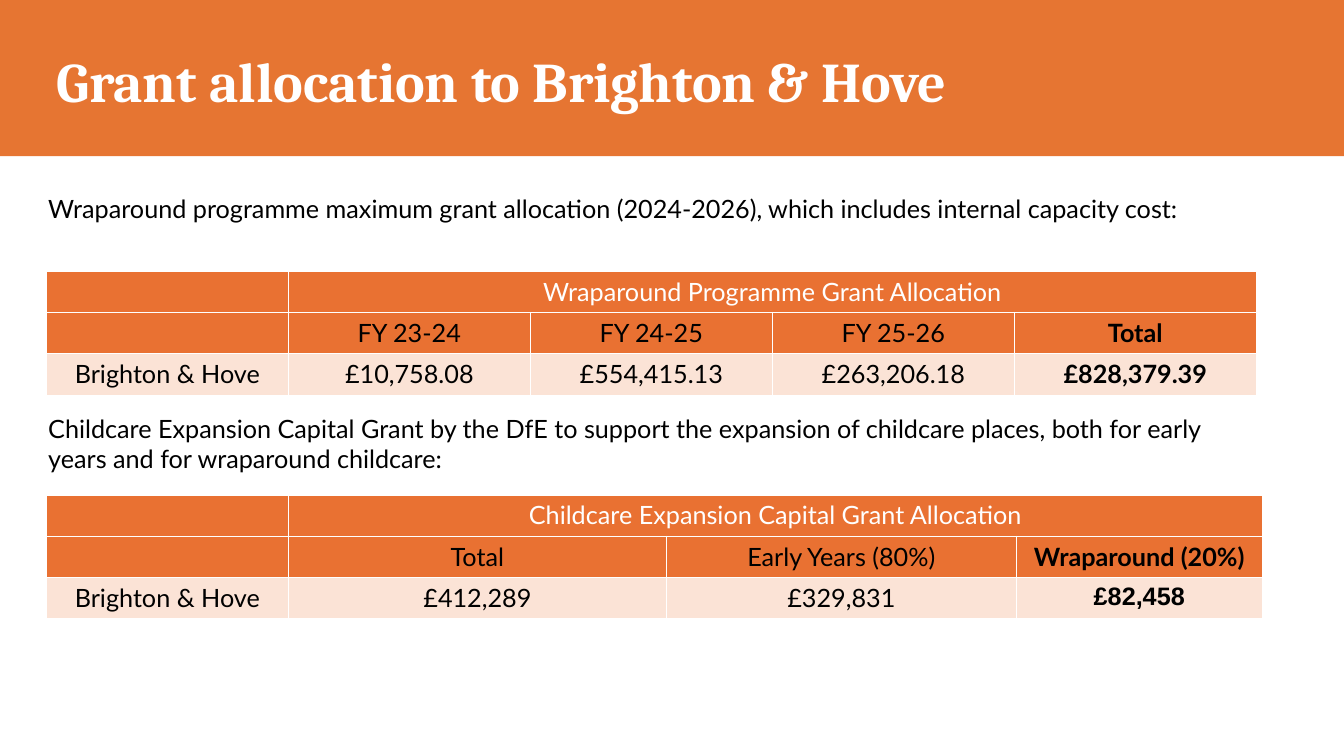
from dataclasses import dataclass

from lxml import etree
from pptx import Presentation
from pptx import util as u
from pptx.dml.color import RGBColor
from pptx.enum import shapes, text
from pptx.oxml import ns

# Content: bold cells are the last column below the heading
TITLE = "Grant allocation to Brighton & Hove"
SECTIONS = [
    {
        "intro": "Wraparound programme maximum grant allocation (2024-2026), "
                 "which includes internal capacity cost:",
        "intro_top": 1.87, "intro_height": 0.4, "table_top": 2.69,
        "columns": [2.4] * 5,
        "rows": [
            ["", "Wraparound Programme Grant Allocation", "", "", ""],
            ["", "FY 23-24", "FY 24-25", "FY 25-26", "Total"],
            ["Brighton & Hove", "£10,758.08", "£554,415.13", "£263,206.18", "£828,379.39"],
        ],
        "total_font": "Lato",
    },
    {
        "intro": "Childcare Expansion Capital Grant by the DfE to support the expansion "
                 "of childcare places, both for early years and for wraparound childcare:",
        "intro_top": 4.05, "intro_height": 0.71, "table_top": 4.91,
        "columns": [2.4, 3.75, 3.47, 2.44],
        "rows": [
            ["", "Childcare Expansion Capital Grant Allocation", "", ""],
            ["", "Total", "Early Years (80%)", "Wraparound (20%)"],
            ["Brighton & Hove", "£412,289", "£329,831", "£82,458"],
        ],
        "total_font": "Arial",
    },
]


@dataclass(frozen=True)
class Theme:
    banner: str = "E67532"
    header: str = "E97132"
    body: str = "FBE3D6"
    white: str = "FFFFFF"
    black: str = "000000"
    title_font: str = "Cambria"
    text_font: str = "Lato"
    title_size: int = 40
    text_size: int = 18
    border: float = 1


THEME = Theme()
WIDTH, HEIGHT = 13.33, 7.5
LEFT, INTRO_LEFT = 0.46, 0.38
CONTENT_WIDTH, INTRO_WIDTH = 12, 12.08
ROW_HEIGHT = 0.41


def style(paragraph, size, name, color, bold=False):
    font = paragraph.font
    font.size, font.name, font.bold = u.Pt(size), name, bold
    font.color.rgb = RGBColor.from_string(color)


def add_text(slide, box, words, size, name, color, bold=False):
    shape = slide.shapes.add_textbox(*map(u.Inches, box))
    shape.text_frame.word_wrap = True
    paragraph = shape.text_frame.paragraphs[0]
    paragraph.text = words
    style(paragraph, size, name, color, bold)
    return shape.text_frame


def add_borders(cell):
    properties = cell._tc.get_or_add_tcPr()
    for side in ("a:lnL", "a:lnR", "a:lnT", "a:lnB"):
        line = etree.SubElement(properties, ns.qn(side), w=str(u.Pt(THEME.border)))
        fill = etree.SubElement(line, ns.qn("a:solidFill"))
        etree.SubElement(fill, ns.qn("a:srgbClr"), val=THEME.white)


def add_grant_table(slide, section):
    rows, columns = section["rows"], section["columns"]
    last = len(columns) - 1
    frame = slide.shapes.add_table(
        len(rows), len(columns), u.Inches(LEFT), u.Inches(section["table_top"]),
        u.Inches(sum(columns)), u.Inches(ROW_HEIGHT * len(rows)))
    table = frame.table
    table.first_row = table.horz_banding = False
    for column, width in zip(table.columns, columns):
        column.width = u.Inches(width)

    for r, row in enumerate(rows):
        table.rows[r].height = u.Inches(ROW_HEIGHT)
        for c, words in enumerate(row):
            cell = table.cell(r, c)
            add_borders(cell)
            cell.fill.solid()
            cell.fill.fore_color.rgb = RGBColor.from_string(
                THEME.body if r == len(rows) - 1 else THEME.header)
            paragraph = cell.text_frame.paragraphs[0]
            paragraph.text = words
            paragraph.alignment = text.PP_ALIGN.CENTER
            is_total = r == len(rows) - 1 and c == last
            style(paragraph, THEME.text_size,
                  section["total_font"] if is_total else THEME.text_font,
                  THEME.black if r else THEME.white, bold=r > 0 and c == last)
    table.cell(0, 1).merge(table.cell(0, last))


def main():
    presentation = Presentation()
    presentation.slide_width = u.Inches(WIDTH)
    presentation.slide_height = u.Inches(HEIGHT)
    slide = presentation.slides.add_slide(presentation.slide_layouts[6])

    # Banner and title
    banner = slide.shapes.add_shape(
        shapes.MSO_SHAPE.RECTANGLE, 0, 0, presentation.slide_width, u.Inches(1.55))
    banner.shadow.inherit = False
    banner.fill.solid()
    banner.fill.fore_color.rgb = RGBColor.from_string(THEME.banner)
    banner.line.fill.background()
    title = add_text(slide, (LEFT, 0.21, CONTENT_WIDTH, 1.25), TITLE,
                     THEME.title_size, THEME.title_font, THEME.white, bold=True)
    title.vertical_anchor = text.MSO_ANCHOR.MIDDLE
    title.paragraphs[0].line_spacing = 0.9

    # Grants: an introduction above each table
    for section in SECTIONS:
        box = (INTRO_LEFT, section["intro_top"], INTRO_WIDTH, section["intro_height"])
        add_text(slide, box, section["intro"],
                 THEME.text_size, THEME.text_font, THEME.black)
        add_grant_table(slide, section)

    presentation.save("out.pptx")


if __name__ == "__main__":
    main()
